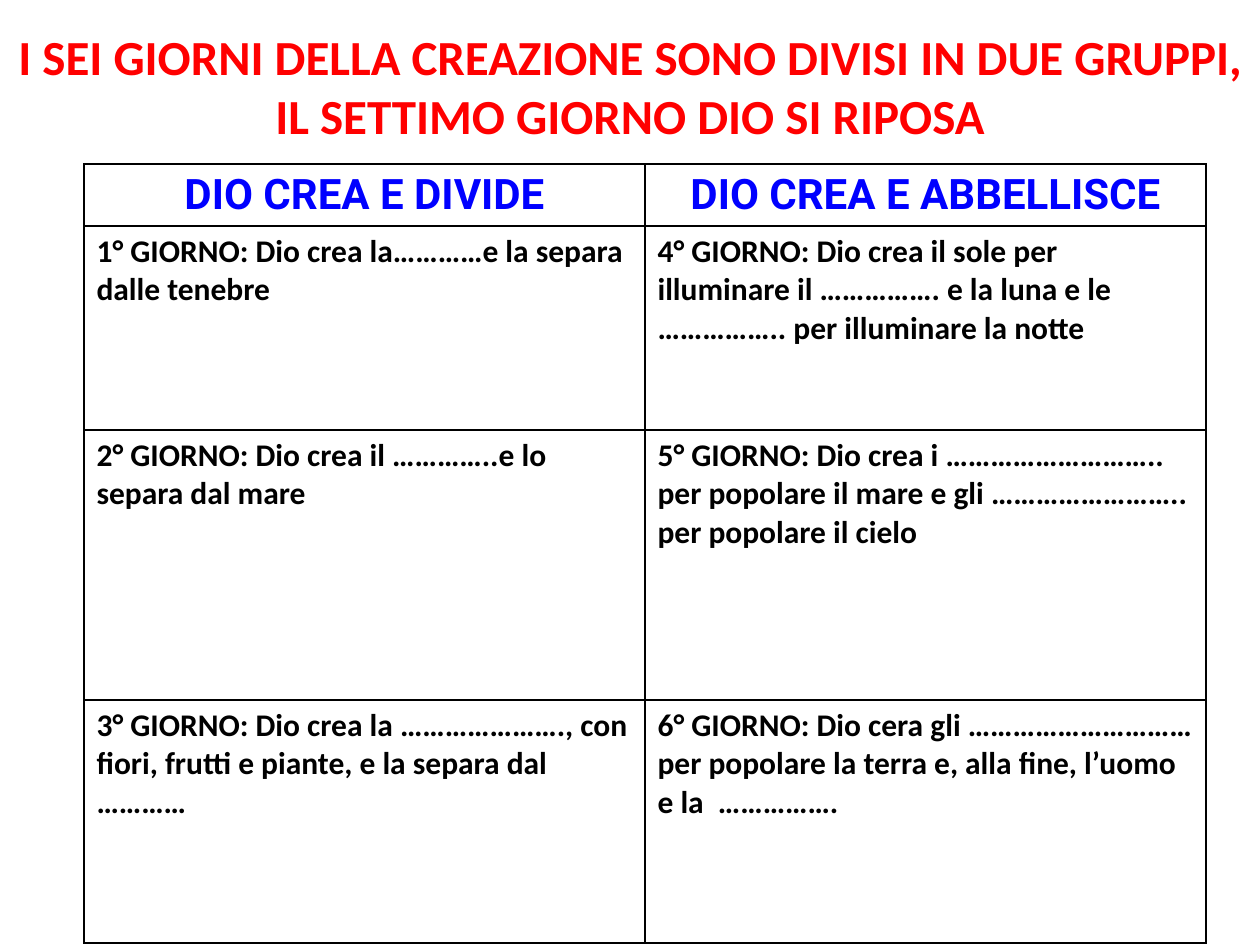
from dataclasses import dataclass

from lxml import etree
from pptx import Presentation
from pptx.dml.color import RGBColor
from pptx.enum.text import MSO_ANCHOR, MSO_AUTO_SIZE, PP_ALIGN
from pptx.oxml.ns import qn
from pptx.util import Emu, Pt

CENTER, LEFT = PP_ALIGN.CENTER, PP_ALIGN.LEFT
MIDDLE, TOP = MSO_ANCHOR.MIDDLE, MSO_ANCHOR.TOP
NO_AUTOFIT = MSO_AUTO_SIZE.NONE

PX_PER_INCH = 126
COLORS = {
    "title": "FF0000",
    "heading": "0000FF",
    "body": "000000",
    "border": "000000",
    "paper": "FFFFFF",
}


@dataclass(frozen=True)
class TextStyle:
    font: str
    size: int
    color: str
    align: PP_ALIGN


TITLE = TextStyle("Calibri", 28, "title", CENTER)
HEADING = TextStyle("Roboto", 24, "heading", CENTER)
BODY = TextStyle("Calibri", 18, "body", LEFT)


@dataclass(frozen=True)
class TableRow:
    height: int
    style: TextStyle
    texts: tuple[str, str]


COLUMN_WIDTH = 561
ROWS = (
    TableRow(62, HEADING, ("DIO CREA E DIVIDE", "DIO CREA E ABBELLISCE")),
    TableRow(204, BODY, (
        "1° GIORNO: Dio crea la…………e la separa\ndalle tenebre",
        "4° GIORNO: Dio crea il sole per illuminare il ……………. e la luna e le "
        "…………….. per illuminare la notte",
    )),
    TableRow(270, BODY, (
        "2° GIORNO: Dio crea il …………..e lo separa dal mare",
        "5° GIORNO: Dio crea i ……………………….. per popolare il mare e gli "
        "…………………….. per popolare il cielo",
    )),
    TableRow(243, BODY, (
        "3° GIORNO: Dio crea la …………………., con fiori, frutti e piante, "
        "e la separa dal …………",
        "6° GIORNO: Dio cera gli ………………………… per popolare la terra e, "
        "alla fine, l’uomo e la  …………….",
    )),
)


def px(length: int) -> Emu:
    return Emu(round(length * 914400 / PX_PER_INCH))


def rgb(name: str) -> RGBColor:
    return RGBColor.from_string(COLORS[name])


def write_text(text_frame, text: str, style: TextStyle) -> None:
    text_frame.text = text
    text_frame.word_wrap = True
    for paragraph in text_frame.paragraphs:
        paragraph.alignment = style.align
        paragraph.font.name = style.font
        paragraph.font.size = Pt(style.size)
        paragraph.font.bold = True
        paragraph.font.color.rgb = rgb(style.color)


def add_borders(cell) -> None:
    """Border lines must come before the fill in the cell properties."""
    properties = cell._tc.get_or_add_tcPr()
    for position, side in enumerate(("a:lnL", "a:lnR", "a:lnT", "a:lnB")):
        line = etree.Element(qn(side), w=str(Pt(1)))
        fill = etree.SubElement(line, qn("a:solidFill"))
        etree.SubElement(fill, qn("a:srgbClr"), val=COLORS["border"])
        properties.insert(position, line)


def add_days_table(slide, left: int, top: int) -> None:
    column_count = len(ROWS[0].texts)
    table = slide.shapes.add_table(
        len(ROWS), column_count, px(left), px(top),
        px(COLUMN_WIDTH * column_count), px(sum(row.height for row in ROWS)),
    ).table
    for column in table.columns:
        column.width = px(COLUMN_WIDTH)
    for row_index, row in enumerate(ROWS):
        table.rows[row_index].height = px(row.height)
        for column_index, text in enumerate(row.texts):
            cell = table.cell(row_index, column_index)
            cell.fill.solid()
            cell.fill.fore_color.rgb = rgb("paper")
            cell.vertical_anchor = TOP
            write_text(cell.text_frame, text, row.style)
            add_borders(cell)


def format_title(slide) -> None:
    title = slide.shapes.title
    title.left, title.top, title.width, title.height = map(px, (0, -1, 1260, 173))
    frame = title.text_frame
    frame.auto_size = NO_AUTOFIT
    frame.vertical_anchor = MIDDLE
    write_text(
        frame,
        "I SEI GIORNI DELLA CREAZIONE SONO DIVISI IN DUE GRUPPI, "
        "IL SETTIMO GIORNO DIO SI RIPOSA",
        TITLE,
    )


def main() -> None:
    presentation = Presentation()
    presentation.slide_width, presentation.slide_height = px(1260), px(945)
    slide = presentation.slides.add_slide(presentation.slide_layouts[5])
    # Title across the full width
    format_title(slide)
    # Two groups of three days
    add_days_table(slide, 84, 164)
    presentation.save("out.pptx")


if __name__ == "__main__":
    main()
